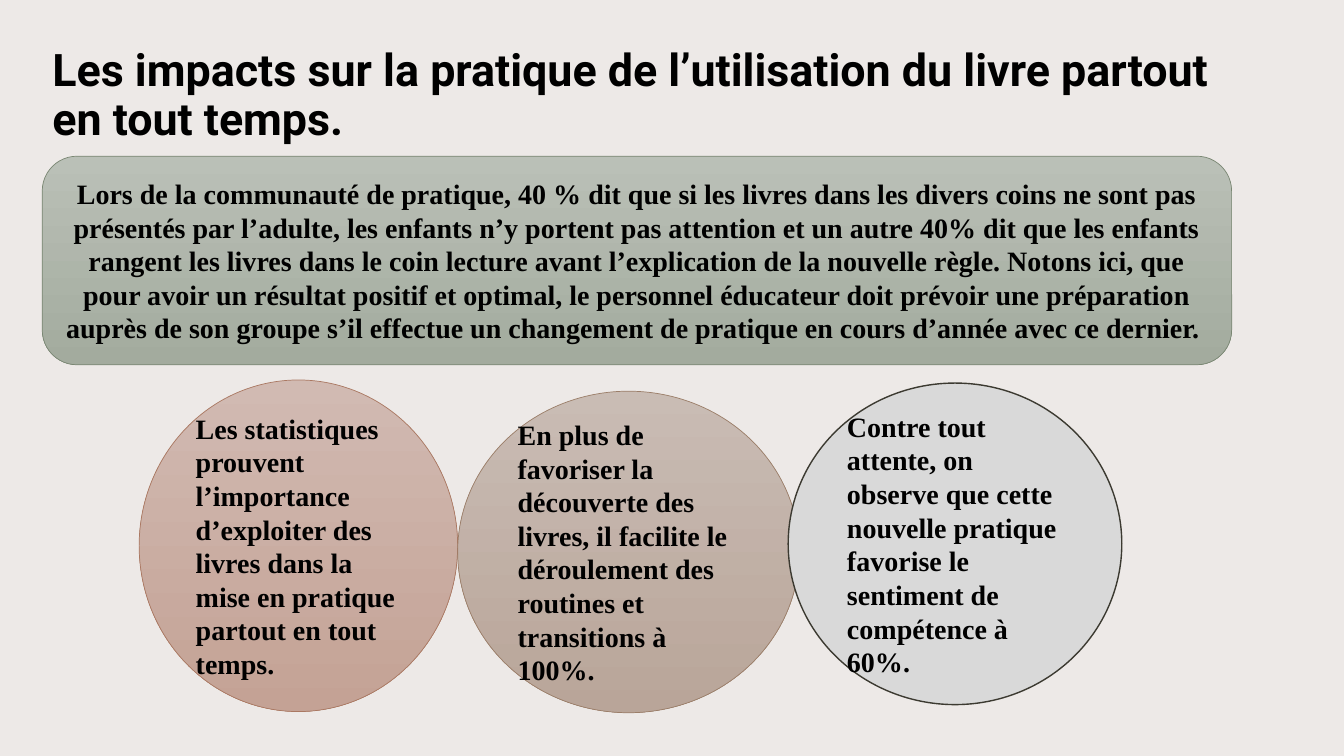
from pptx import Presentation
from pptx.dml.color import RGBColor
from pptx.enum.shapes import MSO_SHAPE
from pptx.enum.text import MSO_ANCHOR, MSO_AUTO_SIZE, PP_ALIGN
from pptx.util import Pt

BACKGROUND = RGBColor(0xED, 0xE9, 0xE7)
BLACK = RGBColor(0x00, 0x00, 0x00)
ROSE_TOP = RGBColor(0xD1, 0xBA, 0xB2)
ROSE_BOTTOM = RGBColor(0xC4, 0xA2, 0x95)
ROSE_LINE = RGBColor(0xAA, 0x78, 0x62)
TAUPE_TOP = RGBColor(0xC9, 0xBC, 0xB4)
TAUPE_BOTTOM = RGBColor(0xB9, 0xA5, 0x99)
TAUPE_LINE = RGBColor(0x9B, 0x7E, 0x69)
GREY = RGBColor(0xD9, 0xD9, 0xD9)
GREY_LINE = RGBColor(0x3C, 0x3A, 0x31)
SAGE_TOP = RGBColor(0xBA, 0xC0, 0xB7)
SAGE_BOTTOM = RGBColor(0xA3, 0xAB, 0x9E)
SAGE_LINE = RGBColor(0x7A, 0x87, 0x73)


def write(box, text, font, size, align, anchor, spacing=None):
    """Put one bold black paragraph in a shape."""
    frame = box.text_frame
    for name, value in {"word_wrap": True, "auto_size": MSO_AUTO_SIZE.NONE,
                        "vertical_anchor": anchor}.items():
        setattr(frame, name, value)
    para = frame.paragraphs[0]
    para.alignment = align
    para.line_spacing = spacing
    span = para.add_run()
    span.text = text
    for name, value in {"name": font, "size": Pt(size), "bold": True}.items():
        setattr(span.font, name, value)
    span.font.color.rgb = BLACK


# Deck and page
deck = Presentation()
deck.slide_width, deck.slide_height = Pt(960), Pt(540)
page = deck.slides.add_slide(deck.slide_layouts[5])
page.background.fill.solid()
page.background.fill.fore_color.rgb = BACKGROUND

# Title
title = page.shapes.title
for name, value in {"left": 30.2, "top": 19.4, "width": 864, "height": 87.8}.items():
    setattr(title, name, Pt(value))
write(title, "Les impacts sur la pratique de l’utilisation du livre partout en tout temps.",
      "Roboto", 32, PP_ALIGN.LEFT, MSO_ANCHOR.BOTTOM, 0.9)

# Three findings in circles, then the summary panel:
# shape, place, fill colours from top to bottom, line, line width, alignment, text
panels = [
    (MSO_SHAPE.OVAL, (99.4, 271.4, 227.5, 236.9), (ROSE_TOP, ROSE_BOTTOM),
     ROSE_LINE, 0.5, PP_ALIGN.LEFT,
     "Les statistiques prouvent l’importance d’exploiter des livres dans la "
     "mise en pratique partout en tout temps."),
    (MSO_SHAPE.OVAL, (326.9, 279.4, 244.1, 229.7), (TAUPE_TOP, TAUPE_BOTTOM),
     TAUPE_LINE, 0.5, PP_ALIGN.LEFT,
     "En plus de favoriser la découverte des livres, il facilite le "
     "déroulement des routines et transitions à 100%."),
    (MSO_SHAPE.OVAL, (563, 273.6, 238.3, 229.7), (GREY,),
     GREY_LINE, 1, PP_ALIGN.LEFT,
     "Contre tout attente, on observe que cette nouvelle pratique favorise le "
     "sentiment de compétence à 60%."),
    (MSO_SHAPE.ROUNDED_RECTANGLE, (30.2, 111.6, 849.6, 149), (SAGE_TOP, SAGE_BOTTOM),
     SAGE_LINE, 0.5, PP_ALIGN.CENTER,
     "Lors de la communauté de pratique, 40 % dit que si les livres dans les "
     "divers coins ne sont pas présentés par l’adulte, les enfants n’y portent "
     "pas attention et un autre 40% dit que les enfants rangent les livres dans "
     "le coin lecture avant l’explication de la nouvelle règle. Notons ici, que "
     "pour avoir un résultat positif et optimal, le personnel éducateur doit "
     "prévoir une préparation auprès de son groupe s’il effectue un changement "
     "de pratique en cours d’année avec ce dernier. "),
]
for kind, place, colours, line, width, align, text in panels:
    box = page.shapes.add_shape(kind, *map(Pt, place))
    box.shadow.inherit = False
    if len(colours) == 1:
        box.fill.solid()
        box.fill.fore_color.rgb = colours[0]
    else:
        box.fill.gradient()
        box.fill.gradient_angle = 270
        for stop, colour in zip(box.fill.gradient_stops, colours):
            stop.color.rgb = colour
    box.line.color.rgb = line
    box.line.width = Pt(width)
    write(box, text, "Times New Roman", 20, align, MSO_ANCHOR.MIDDLE)

deck.save("out.pptx")
